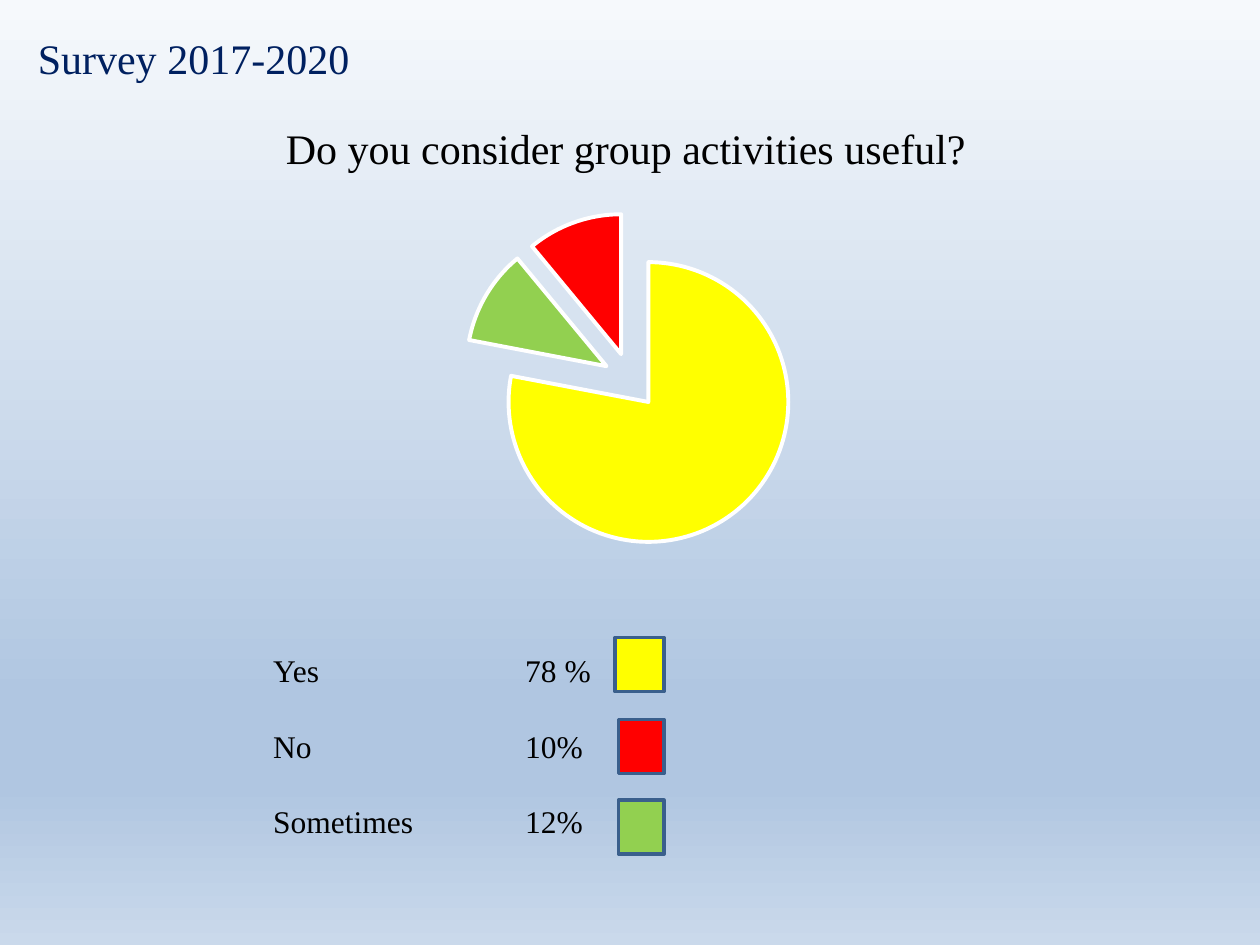
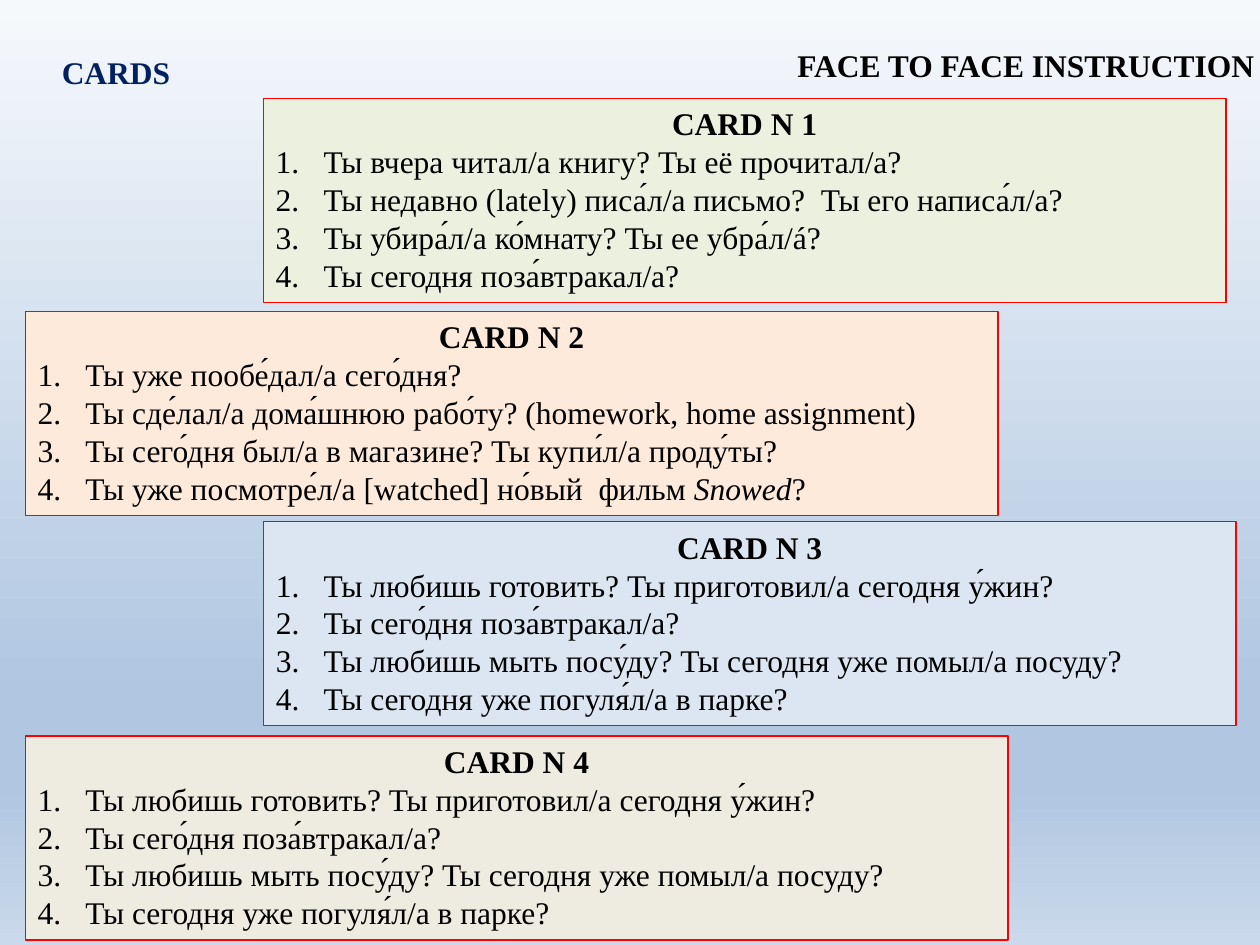
from lxml.etree import SubElement
from pptx import Presentation
from pptx.chart.data import CategoryChartData
from pptx.dml.color import RGBColor
from pptx.enum.chart import XL_CHART_TYPE
from pptx.enum.shapes import MSO_SHAPE
from pptx.enum.text import MSO_ANCHOR, MSO_AUTO_SIZE, PP_ALIGN
from pptx.oxml import parse_xml
from pptx.oxml.ns import nsdecls, qn
from pptx.util import Inches, Pt

BLACK = RGBColor(0x00, 0x00, 0x00)
WHITE = RGBColor(0xFF, 0xFF, 0xFF)
NAVY = RGBColor(0x00, 0x20, 0x60)
YELLOW = RGBColor(0xFF, 0xFF, 0x00)
RED = RGBColor(0xFF, 0x00, 0x00)
GREEN = RGBColor(0x92, 0xD0, 0x50)
SWATCH_EDGE = RGBColor(0x3A, 0x5F, 0x8C)
PALE_GREEN = RGBColor(0xEB, 0xF1, 0xDE)
PALE_ORANGE = RGBColor(0xFD, 0xEA, 0xDA)
PALE_BLUE = RGBColor(0xDC, 0xE6, 0xF2)
PALE_TAN = RGBColor(0xEE, 0xEC, 0xE1)
SKY = [(0, RGBColor(0xF6, 0xF9, 0xFC)), (74, RGBColor(0xB0, 0xC6, 0xE1)),
       (83, RGBColor(0xB0, 0xC6, 0xE1)), (100, RGBColor(0xCA, 0xD9, 0xEB))]
FONT = "Times New Roman"

SURVEY_TITLE = "Survey 2017-2020"
SURVEY_QUESTION = "Do you consider group activities useful?"
SLICES = [("1", 78, YELLOW), ("2", 11, GREEN), ("3", 11, RED)]
ANSWERS = [
    ("Yes", "78 %", YELLOW, (4.88, 5.06, 0.39, 0.43)),
    ("No", "10%", RED, (4.91, 5.71, 0.36, 0.43)),
    ("Sometimes", "12%", GREEN, (4.91, 6.35, 0.36, 0.43)),
]

CARDS_TITLE = "CARDS"
CARDS_HEADING = "FACE TO FACE INSTRUCTION"
EVENING_QUESTIONS = [
    ["Ты любишь готовить? Ты приготовил/a сегодня у́жин?"],
    ["Ты сего́дня поза́втракал/a?"],
    ["Ты любишь мыть посу́ду? Ты сегодня уже помыл/а посуду?"],
    ["Ты сегодня уже погуля́л/a в парке?"],
]
CARDS = [
    (0.78, 7.64, PALE_GREEN, [
        ["Ты вчера читал/a книгу? Ты её прочитал/a?"],
        ["Ты недавно (lately) писа́л/a письмо?  Ты его написа́л/a?"],
        ["Ты убира́л/a ко́мнату? Ты ее убра́л/á?"],
        ["Ты сегодня поза́втракал/a?"],
    ]),
    (2.47, 7.72, PALE_ORANGE, [
        ["Ты уже пообе́дал/а сего́дня?"],
        ["Ты сде́лал/а дома́шнюю рабо́ту? (homework, home assignment)"],
        ["Ты сего́дня был/а в магазине? Ты купи́л/а проду́ты?"],
        ["Ты уже посмотре́л/а [watched] но́вый  фильм ", "Snowed", "?"],
    ]),
    (4.14, 7.72, PALE_BLUE, EVENING_QUESTIONS),
    (5.84, 7.8, PALE_TAN, EVENING_QUESTIONS),
]
CARD_LEFTS = (2.09, 0.2)
CARD_HEIGHT = 1.62


def inches(box):
    return [Inches(length) for length in box]


def write(paragraph, text, size=18, color=BLACK, bold=False, italic=False):
    run = paragraph.add_run()
    run.text = text
    run.font.name = FONT
    run.font.size = Pt(size)
    run.font.color.rgb = color
    run.font.bold = bold
    run.font.italic = italic


def paint_background(master):
    fill = master.background.fill
    fill.gradient()
    fill.gradient_angle = 270
    stops = master.element.find(".//" + qn("a:gsLst"))
    for stop in list(stops):
        stops.remove(stop)
    for percent, color in SKY:
        stop = SubElement(stops, qn("a:gs"), pos=str(percent * 1000))
        SubElement(stop, qn("a:srgbClr"), val=str(color))


def add_titled_slide(deck, text, box, size, bold=False):
    slide = deck.slides.add_slide(deck.slide_layouts[5])
    title = slide.shapes.title
    title.left, title.top, title.width, title.height = inches(box)
    frame = title.text_frame
    frame.vertical_anchor = MSO_ANCHOR.TOP
    frame.auto_size = MSO_AUTO_SIZE.NONE
    frame.paragraphs[0].alignment = PP_ALIGN.LEFT
    write(frame.paragraphs[0], text, size, NAVY, bold)
    return slide


def add_text(slide, box, wrap=True):
    frame = slide.shapes.add_textbox(*inches(box)).text_frame
    frame.word_wrap = wrap
    return frame


def add_rectangle(slide, box, fill, edge, edge_width):
    rectangle = slide.shapes.add_shape(MSO_SHAPE.RECTANGLE, *inches(box))
    rectangle.shadow.inherit = False
    rectangle.fill.solid()
    rectangle.fill.fore_color.rgb = fill
    rectangle.line.color.rgb = edge
    rectangle.line.width = Pt(edge_width)
    return rectangle


def add_survey_pie(slide):
    data = CategoryChartData()
    data.categories = [category for category, _, _ in SLICES]
    data.add_series("Series 1", [share for _, share, _ in SLICES])
    chart = slide.shapes.add_chart(
        XL_CHART_TYPE.PIE, *inches((2.49, 1.55, 5.03, 2.94)), data).chart
    chart.has_legend = False
    chart.has_title = False
    chart.font.name = "Calibri"
    chart.font.size = Pt(10)
    chart.font.color.rgb = BLACK
    pie = chart.plots[0]
    pie.vary_by_categories = True
    answers = pie.series[0]
    answers.format.line.color.rgb = WHITE
    explosion = parse_xml(f'<c:explosion {nsdecls("c")} val="20"/>')
    answers.format.line.width = Pt(2.25)
    answers._element.find(qn("c:spPr")).addnext(explosion)
    for index, (_, _, color) in enumerate(SLICES):
        look = answers.points[index].format
        look.fill.solid()
        look.fill.fore_color.rgb = color
        look.line.color.rgb = WHITE
        look.line.width = Pt(2.25)


def add_answer_key(slide):
    frame = add_text(slide, (2.07, 5.12, 2.75, 1.62))
    for index, (answer, share, color, swatch) in enumerate(ANSWERS):
        line = frame.add_paragraph() if index else frame.paragraphs[0]
        line.space_before = Pt(21.5 if index else 0)
        tabs = SubElement(line._p.get_or_add_pPr(), qn("a:tabLst"))
        SubElement(tabs, qn("a:tab"), pos=str(Inches(2)), algn="l")
        write(line, f"{answer}\t{share}")
        add_rectangle(slide, swatch, color, SWATCH_EDGE, 2)


def add_card(slide, number, left, top, width, fill, questions):
    card = add_rectangle(slide, (left, top, width, CARD_HEIGHT), fill, RED, 0.75)
    frame = card.text_frame
    frame.word_wrap = True
    frame.vertical_anchor = MSO_ANCHOR.TOP
    heading = frame.paragraphs[0]
    heading.alignment = PP_ALIGN.CENTER
    write(heading, f"CARD N {number}", bold=True)
    for question in questions:
        line = frame.add_paragraph()
        line.alignment = PP_ALIGN.LEFT
        properties = line._p.get_or_add_pPr()
        properties.set("marL", str(Inches(0.38)))
        properties.set("indent", str(-Inches(0.38)))
        SubElement(properties, qn("a:buFont"), typeface="+mj-lt")
        SubElement(properties, qn("a:buAutoNum"), type="arabicPeriod")
        for position, part in enumerate(question):
            write(line, part, italic=position == 1)


def main():
    """Build the survey slide and the question card slide."""
    deck = Presentation()
    deck.slide_width, deck.slide_height = Inches(10), Inches(7.5)
    paint_background(deck.slide_master)

    survey = add_titled_slide(deck, SURVEY_TITLE, (0.2, 0.21, 2.72, 0.5), 24)
    add_survey_pie(survey)
    question = add_text(survey, (2.17, 0.92, 6.46, 0.5))
    write(question.paragraphs[0], SURVEY_QUESTION, 24)
    add_answer_key(survey)

    cards = add_titled_slide(deck, CARDS_TITLE, (0.39, 0.37, 1.13, 0.4), 18, True)
    heading = add_text(cards, (6.23, 0.32, 3.86, 0.4), wrap=False)
    write(heading.paragraphs[0], CARDS_HEADING, bold=True)
    for index, (top, width, fill, questions) in enumerate(CARDS):
        add_card(cards, index + 1, CARD_LEFTS[index % 2], top, width, fill, questions)

    deck.save("out.pptx")


if __name__ == "__main__":
    main()
